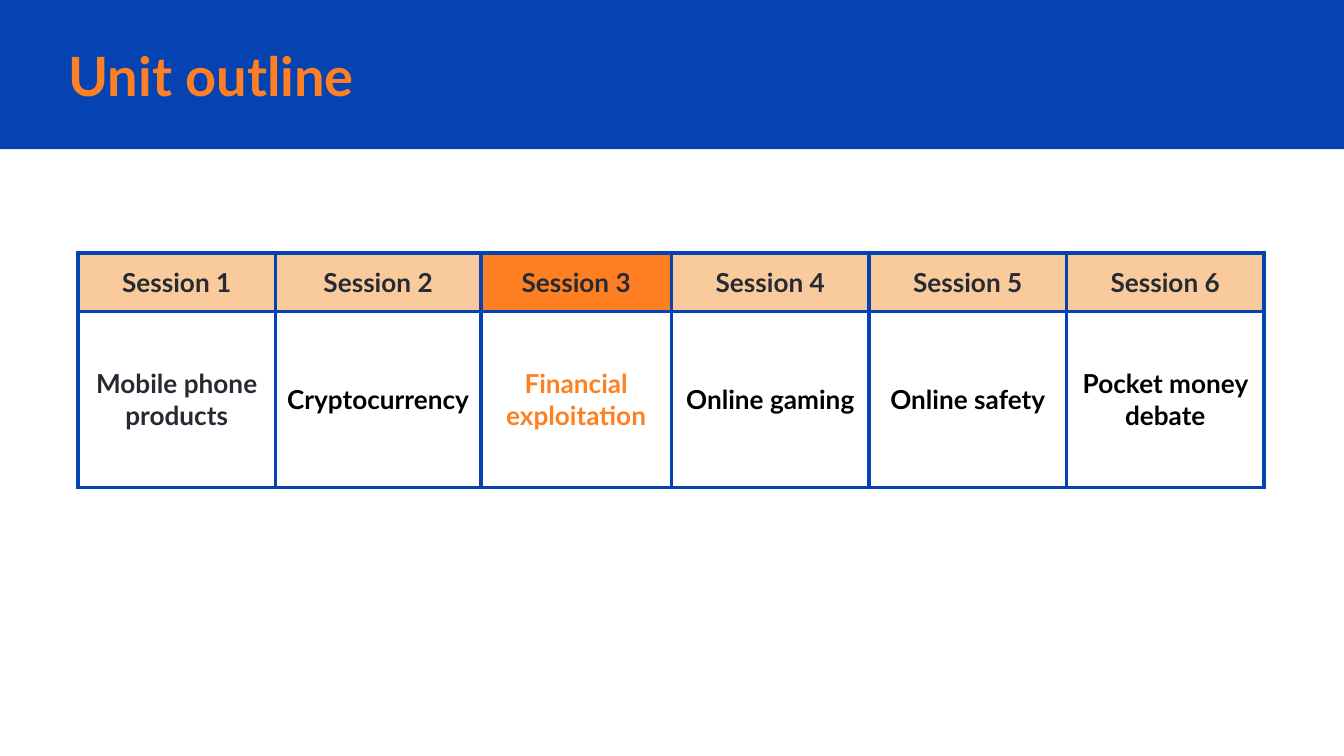
"""Build the unit outline slide with its six-session table."""
from lxml import etree
from pptx import Presentation
from pptx.dml.color import RGBColor
from pptx.enum.shapes import MSO_SHAPE
from pptx.enum.text import MSO_ANCHOR, MSO_AUTO_SIZE, PP_ALIGN
from pptx.oxml.ns import qn
from pptx.util import Pt

RECTANGLE = MSO_SHAPE.RECTANGLE
MIDDLE = MSO_ANCHOR.MIDDLE
NO_AUTOFIT = MSO_AUTO_SIZE.NONE
LEFT, CENTER = PP_ALIGN.LEFT, PP_ALIGN.CENTER

COLORS = {
    "blue": "0543B3",
    "orange": "FF8022",
    "peach": "F9CB9C",
    "ink": "262A33",
    "black": "000000",
}
SIDES = ("left", "top", "right", "bottom")
BORDER_TAGS = ("a:lnL", "a:lnR", "a:lnT", "a:lnB")
BORDER_WIDTH = Pt(2.25)
COLUMN_WIDTHS = (105.8, 110, 102.2, 105.8, 105.8, 105.8)
ROW_HEIGHTS = (31, 94.3)
CURRENT_SESSION = 3
TOPICS = (
    ("Mobile phone products", "ink"),
    ("Cryptocurrency", "black"),
    ("Financial exploitation", "orange"),
    ("Online gaming", "black"),
    ("Online safety", "black"),
    ("Pocket money debate", "black"),
)


def rgb(color):
    return RGBColor.from_string(COLORS[color])


def write(frame, text, size, color, alignment):
    frame.text = text
    paragraph = frame.paragraphs[0]
    paragraph.alignment = alignment
    font = paragraph.runs[0].font
    for name, value in {"name": "Lato", "size": Pt(size), "bold": True}.items():
        setattr(font, name, value)
    font.color.rgb = rgb(color)


def set_margins(holder, inset):
    for side in SIDES:
        setattr(holder, f"margin_{side}", Pt(inset))


def add_title(slide, text):
    title = slide.shapes.title
    box = {"left": 29.5, "top": 20.2, "width": 609, "height": 40.3}
    for name, value in box.items():
        setattr(title, name, Pt(value))
    frame = title.text_frame
    write(frame, text, 29, "orange", LEFT)
    settings = {"vertical_anchor": MIDDLE, "word_wrap": True, "auto_size": NO_AUTOFIT}
    for name, value in settings.items():
        setattr(frame, name, value)
    set_margins(frame, 7.2)


def add_header_band(slide, width):
    band = slide.shapes.add_shape(RECTANGLE, 0, 0, width, Pt(80))
    band.shadow.inherit = False
    band.fill.solid()
    band.fill.fore_color.rgb = rgb("blue")
    band.line.fill.background()
    slide.shapes.title.element.addprevious(band.element)


def add_borders(cell, color):
    properties = cell._tc.get_or_add_tcPr()
    for position, tag in enumerate(BORDER_TAGS):
        line = etree.Element(qn(tag), w=str(BORDER_WIDTH))
        fill = etree.SubElement(line, qn("a:solidFill"))
        etree.SubElement(fill, qn("a:srgbClr"), val=COLORS[color])
        properties.insert(position, line)


def format_cell(cell, text, color, inset, fill=None):
    write(cell.text_frame, text, 14, color, CENTER)
    cell.vertical_anchor = MIDDLE
    set_margins(cell, inset)
    if fill:
        cell.fill.solid()
        cell.fill.fore_color.rgb = rgb(fill)
    else:
        cell.fill.background()
    add_borders(cell, "blue")


def add_session_table(slide):
    table = slide.shapes.add_table(
        len(ROW_HEIGHTS), len(TOPICS), Pt(41.8), Pt(135.6),
        Pt(sum(COLUMN_WIDTHS)), Pt(sum(ROW_HEIGHTS)),
    ).table
    table.first_row = table.horz_banding = False
    for column, width in zip(table.columns, COLUMN_WIDTHS):
        column.width = Pt(width)
    for row, height in zip(table.rows, ROW_HEIGHTS):
        row.height = Pt(height)
    for index, (topic, color) in enumerate(TOPICS):
        session = index + 1
        fill = "orange" if session == CURRENT_SESSION else "peach"
        format_cell(table.cell(0, index), f"Session {session}", "ink", 7.2, fill)
        format_cell(table.cell(1, index), topic, color, 5)


def main():
    presentation = Presentation()
    presentation.slide_width, presentation.slide_height = Pt(720), Pt(405)
    slide = presentation.slides.add_slide(presentation.slide_layouts[5])
    add_header_band(slide, presentation.slide_width)
    add_title(slide, "Unit outline")
    add_session_table(slide)
    presentation.save("out.pptx")


if __name__ == "__main__":
    main()
